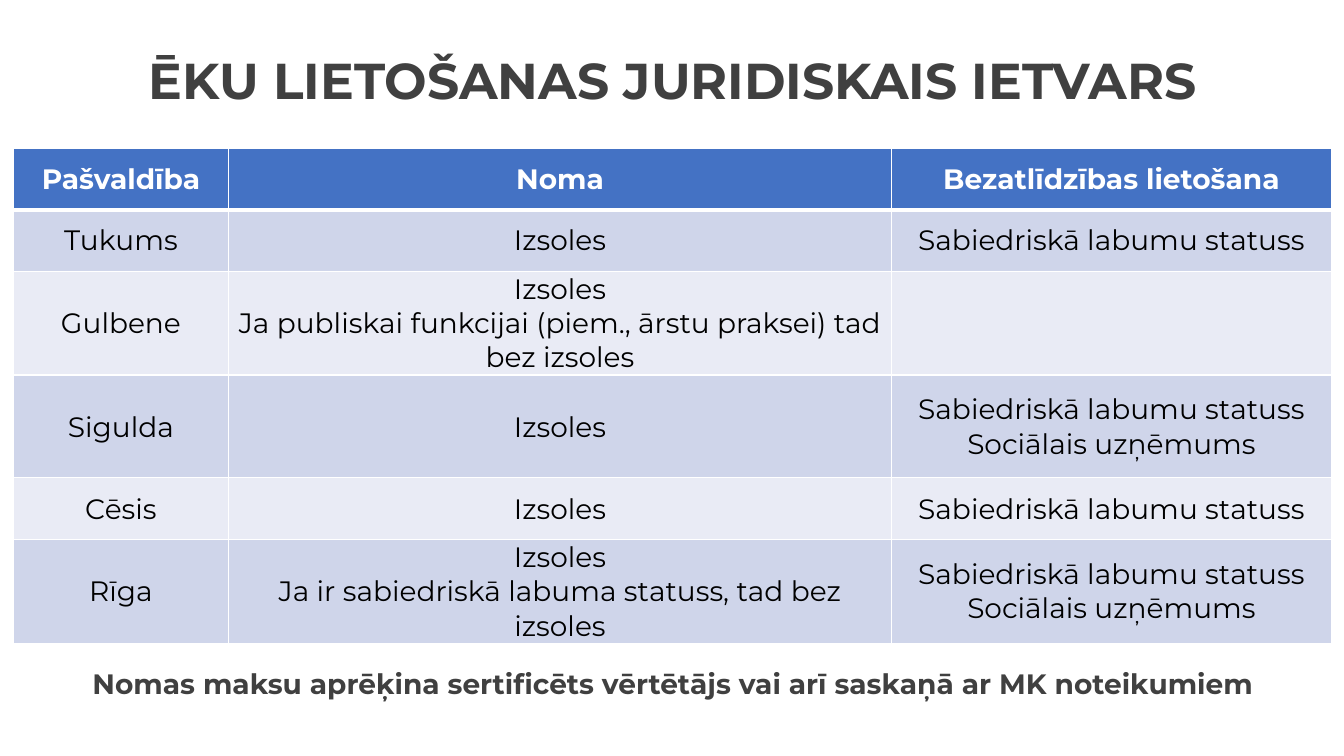
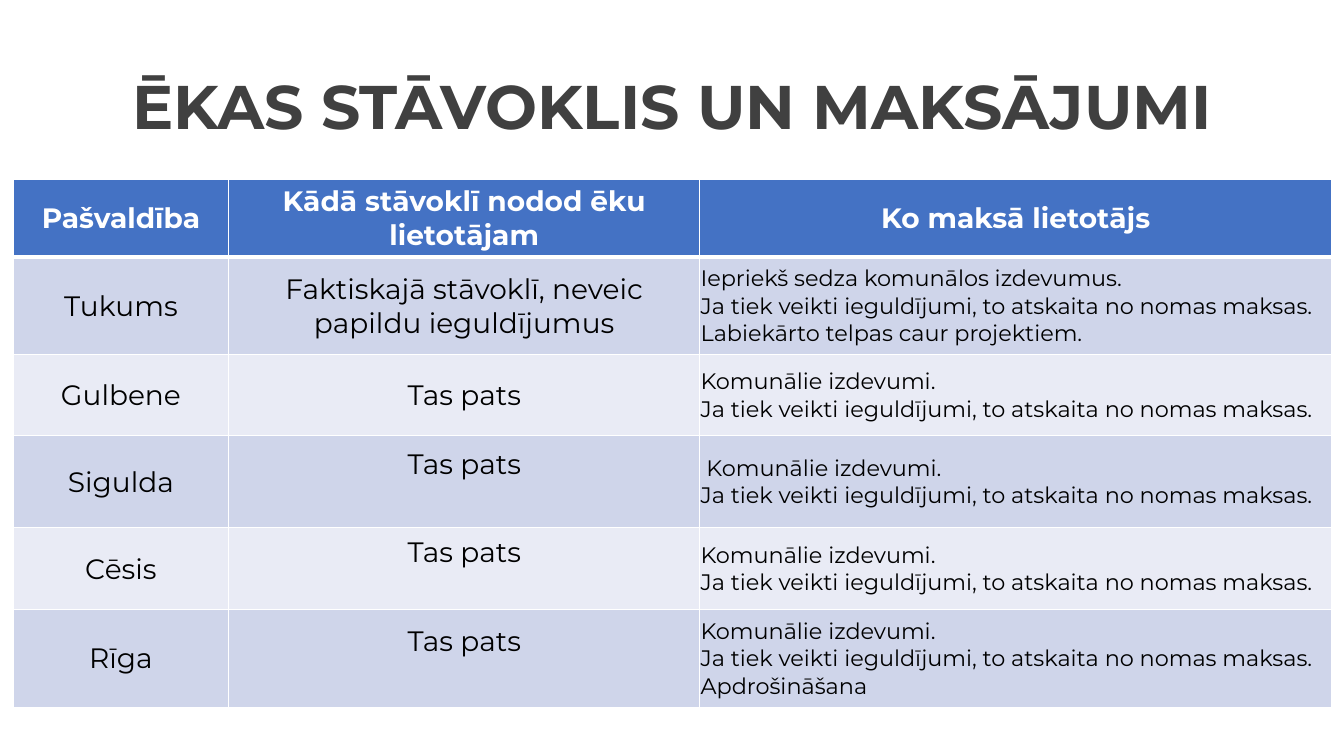
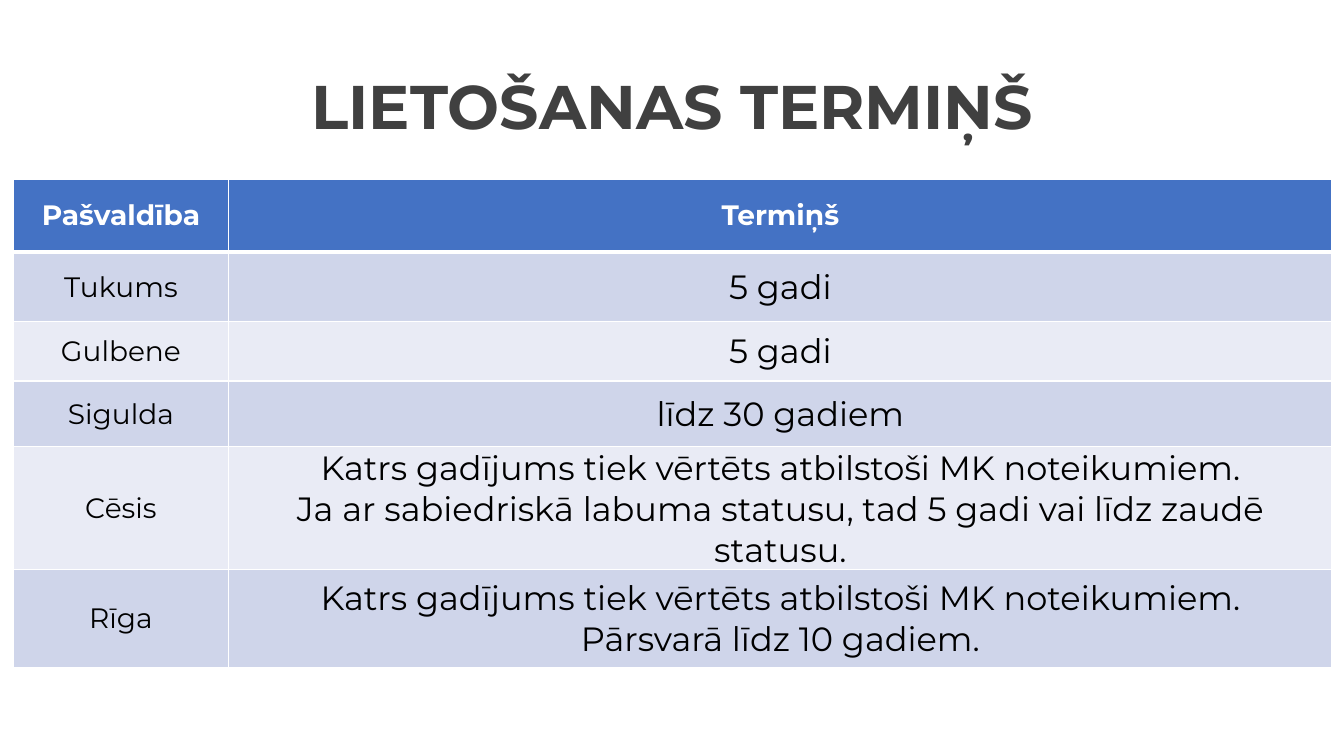
from pptx import Presentation
from pptx.dml.color import RGBColor
from pptx.enum.text import MSO_ANCHOR as ANCHOR, MSO_AUTO_SIZE as AUTO, PP_ALIGN as AL
from pptx.oxml import parse_xml
from pptx.oxml.ns import nsdecls
from pptx.util import Inches, Pt

FONT = "Montserrat"
DARK, WHITE, BLACK = "404040", "FFFFFF", "000000"
HEADER, BANDS = "4472C4", ("E9EBF5", "CFD5EA")
TOWNS = ("Tukums", "Gulbene", "Sigulda", "Cēsis", "Rīga")
TOWN_W, TABLE_X, TABLE_W = 2.14, 0.13, 13.08
CELL_INSETS = dict(margin_left=0.01, margin_top=0.01, margin_right=0.01, margin_bottom=0)
RAISED_INSET = 0.34


def rgb(value):
    return RGBColor.from_string(value)


def set_all(obj, values):
    for name, value in values.items():
        setattr(obj, name, value)


def write(tf, paragraphs, size, color, bold=False, align=AL.CENTER, spacing=None):
    for i, text in enumerate(paragraphs):
        p = tf.add_paragraph() if i else tf.paragraphs[0]
        p.text = text
        set_all(p, dict(alignment=align, line_spacing=spacing))
        for r in p.runs:
            set_all(r.font, dict(name=FONT, size=Pt(size), bold=bold))
            r.font.color.rgb = rgb(color)


def add_text(s, box, text, size, anchor, spacing=None, bottom=0.05, fit=AUTO.NONE):
    tf = s.shapes.add_textbox(*map(Inches, box)).text_frame
    set_all(tf, dict(word_wrap=True, auto_size=fit, vertical_anchor=anchor,
                     margin_bottom=Inches(bottom)))
    write(tf, [text], size, DARK, True, spacing=spacing)


def add_title(s, text, y=0.28, size=44, bottom=0.05):
    add_text(s, (TABLE_X, y, TABLE_W, 1.62), text, size, ANCHOR.MIDDLE, 0.9, bottom)


def add_borders(cell, top, bottom):
    tcPr = cell._tc.get_or_add_tcPr()
    for side, width in zip("LRTB", (1, 1, top, bottom)):
        tcPr.append(parse_xml(
            f'<a:ln{side} {nsdecls("a")} w="{Pt(width)}"><a:solidFill>'
            f'<a:srgbClr val="{WHITE}"/></a:solidFill></a:ln{side}>'))


def add_table(s, y, widths, heights, heads, columns, formats, raised=()):
    rows = [("Pašvaldība", *heads), *zip(TOWNS, *columns)]
    formats = [dict(size=20), *formats]
    box = (TABLE_X, y, sum(widths), sum(heights))
    table = s.shapes.add_table(len(rows), len(widths), *map(Inches, box)).table
    for col, width in zip(table.columns, widths):
        col.width = Inches(width)
    for row, height in zip(table.rows, heights):
        row.height = Inches(height)
    for i, row in enumerate(rows):
        for j, content in enumerate(row):
            cell = table.cell(i, j)
            cell.vertical_anchor = ANCHOR.MIDDLE
            add_borders(cell, 3 if i == 1 else 1, 1 if i else 3)
            cell.fill.solid()
            cell.fill.fore_color.rgb = rgb(BANDS[i % 2] if i else HEADER)
            paragraphs = [content] if isinstance(content, str) else content
            if i == 0:
                write(cell.text_frame, paragraphs, 20, WHITE, True)
                continue
            insets = dict(CELL_INSETS)
            if (row[0], j) in raised:
                insets["margin_bottom"] = RAISED_INSET
            set_all(cell, {k: Inches(v) for k, v in insets.items()})
            write(cell.text_frame, paragraphs, color=BLACK, **formats[j])


def legal_slide(s):
    public = "Sabiedriskā labumu statuss"
    both = (public, "Sociālais uzņēmums")
    rent = ("Izsoles",
            "Izsoles\nJa publiskai funkcijai (piem., ārstu praksei) tad bez izsoles",
            "Izsoles", "Izsoles",
            "Izsoles\nJa ir sabiedriskā labuma statuss, tad bez izsoles")
    add_title(s, "ĒKU LIETOŠANAS JURIDISKAIS IETVARS", 0.32, 36, 0.65)
    add_table(s, 1.47, (TOWN_W, 6.57, 4.37), (0.61, 0.61, 1.02, 1.02, 0.61, 1.02),
              ("Noma", "Bezatlīdzības lietošana"),
              (rent, (public, (), both, public, both)),
              (dict(size=20), dict(size=20)))
    add_text(s, (0.7, 6.56, 11.95, 0.44),
             "Nomas maksu aprēķina sertificēts vērtētājs vai arī saskaņā ar MK noteikumiem",
             20, ANCHOR.TOP, fit=AUTO.SHAPE_TO_FIT_TEXT)


def payment_slide(s):
    bills = "Komunālie izdevumi."
    offset = "Ja tiek veikti ieguldījumi, to atskaita no nomas maksas."
    state = ("Faktiskajā stāvoklī, neveic papildu ieguldījumus", *["Tas pats"] * 4)
    payments = (("Iepriekš sedza komunālos izdevumus.", offset,
                 "Labiekārto telpas caur projektiem."),
                (bills, offset), (" " + bills, offset), (bills, offset),
                (bills, offset, "Apdrošināšana"))
    add_table(s, 1.78, (TOWN_W, 4.67, 6.27), (0.74, 0.97, 0.8, 0.92, 0.81, 0.97),
              ("Kādā stāvoklī nodod ēku lietotājam", "Ko maksā lietotājs"),
              (state, payments), (dict(size=20), dict(size=16, align=AL.LEFT)),
              [(town, 1) for town in TOWNS[2:]])
    add_title(s, "ĒKAS STĀVOKLIS UN MAKSĀJUMI")


def term_slide(s):
    rule = "Katrs gadījums tiek vērtēts atbilstoši MK noteikumiem.\n"
    terms = ("5 gadi", "5 gadi", "līdz 30 gadiem",
             rule + "Ja ar sabiedriskā labuma statusu, tad 5 gadi vai līdz zaudē statusu.",
             rule + "Pārsvarā līdz 10 gadiem.")
    add_table(s, 1.78, (TOWN_W, 10.94), (0.72, 0.69, 0.59, 0.65, 1.22, 0.97),
              ("Termiņš",), (terms,), (dict(size=24),))
    add_title(s, "LIETOŠANAS TERMIŅŠ")


def main():
    prs = Presentation()
    set_all(prs, dict(slide_width=Inches(13.33), slide_height=Inches(7.5)))
    for build in (legal_slide, payment_slide, term_slide):
        build(prs.slides.add_slide(prs.slide_layouts[6]))
    prs.save("out.pptx")


if __name__ == "__main__":
    main()
